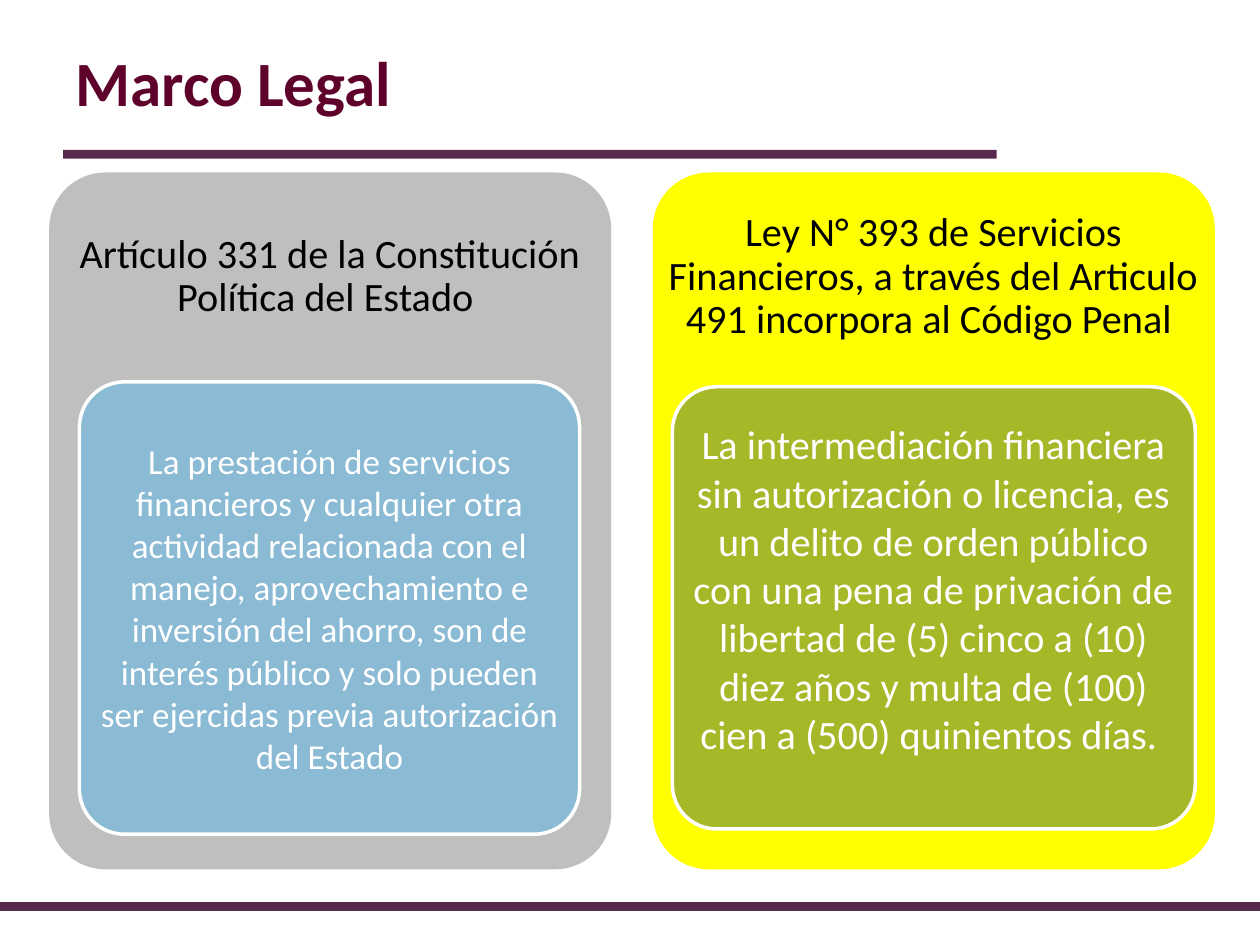
from dataclasses import dataclass

from pptx import Presentation
from pptx.dml.color import RGBColor as Rgb
from pptx.enum.shapes import MSO_SHAPE as Kind
from pptx.enum.text import MSO_ANCHOR as Anchor, PP_ALIGN as Align
from pptx.util import Pt

HUES = {
    "plum": "582A4E",
    "wine": "5E022C",
    "gray": "BFBFBF",
    "blue": "8ABAD4",
    "yellow": "FFFF00",
    "olive": "A6B727",
    "white": "FFFFFF",
    "black": "000000",
}
FACE = "Calibri"
TOP = 98.6
WIDE = 321.2
TALL = 398.2
HEAD = 119.5
PAD = 7.5


@dataclass
class Box:
    left: float
    top: float
    width: float
    height: float

    def pts(self) -> list:
        return [Pt(v) for v in (self.left, self.top, self.width, self.height)]

    def inset(self, pad: float) -> "Box":
        return Box(self.left + pad, self.top + pad,
                   self.width - 2 * pad, self.height - 2 * pad)


@dataclass
class Card:
    left: float
    hue: str
    head: str
    box: Box
    fill: str
    body: str
    size: float
    foot: float


CARDS = [
    Card(28.1, "gray",
         "Artículo 331 de la Constitución Política del Estado ",
         Box(45.4, 218.2, 285.8, 258.5), "blue",
         "La prestación de servicios financieros y cualquier otra actividad "
         "relacionada con el manejo, aprovechamiento e inversión del ahorro, "
         "son de interés público y solo pueden ser ejercidas previa "
         "autorización del Estado", 20, 3),
    Card(373, "yellow",
         "Ley N° 393 de Servicios Financieros, a través del Articulo 491 "
         "incorpora al Código Penal ",
         Box(384.2, 221, 298.8, 252.7), "olive",
         "La intermediación financiera sin autorización o licencia, es un "
         "delito de orden público con una pena de privación de libertad de "
         "(5) cinco a (10) diez años y multa de (100) cien a (500) "
         "quinientos días. ", 23, 25),
]


def color(name: str) -> Rgb:
    return Rgb.from_string(HUES[name])


def block(slide, kind, box: Box, hue: str, edge: str = "") -> None:
    shape = slide.shapes.add_shape(kind, *box.pts())
    shape.shadow.inherit = False
    shape.fill.solid()
    shape.fill.fore_color.rgb = color(hue)
    if kind == Kind.ROUNDED_RECTANGLE:
        shape.adjustments[0] = 0.1
    if edge:
        shape.line.color.rgb = color(edge)
        shape.line.width = Pt(2)
    else:
        shape.line.fill.background()


def label(slide, box: Box, text: str, size: float, hue: str,
          pads: tuple, align=Align.CENTER, lead: float = 1.0,
          bold: bool = False) -> None:
    frame = slide.shapes.add_textbox(*box.pts()).text_frame
    sides = ("left", "top", "right", "bottom")
    form = {f"margin_{s}": Pt(v) for s, v in zip(sides, pads)}
    form |= {"word_wrap": True, "vertical_anchor": Anchor.MIDDLE}
    for key, val in form.items():
        setattr(frame, key, val)
    para = frame.paragraphs[0]
    para.alignment = align
    para.line_spacing = lead
    run = para.add_run()
    run.text = text
    for key, val in {"name": FACE, "size": Pt(size), "bold": bold}.items():
        setattr(run.font, key, val)
    run.font.color.rgb = color(hue)


def draw(slide, card: Card) -> None:
    block(slide, Kind.ROUNDED_RECTANGLE,
          Box(card.left, TOP, WIDE, TALL), card.hue)
    label(slide, Box(card.left, TOP, WIDE, HEAD), card.head, 23, "black",
          (7, 7, 7, 7), lead=0.9)
    block(slide, Kind.ROUNDED_RECTANGLE, card.box, card.fill, "white")
    label(slide, card.box.inset(PAD), card.body, card.size, "white",
          (4.3, 3, 4.3, card.foot))


def main() -> None:
    deck = Presentation()
    deck.slide_width, deck.slide_height = Pt(720), Pt(540)
    slide = deck.slides.add_slide(deck.slide_layouts[6])
    block(slide, Kind.RECTANGLE, Box(0, 516.2, 720, 3.6), "plum", "plum")
    block(slide, Kind.RECTANGLE, Box(36, 85.7, 533.5, 5), "plum")
    label(slide, Box(36, 15.1, 536.4, 62.6), "Marco Legal", 36, "wine",
          (7.2, 3.6, 7.2, 3.6), align=Align.LEFT, bold=True)
    for card in CARDS:
        draw(slide, card)
    deck.save("out.pptx")


if __name__ == "__main__":
    main()
